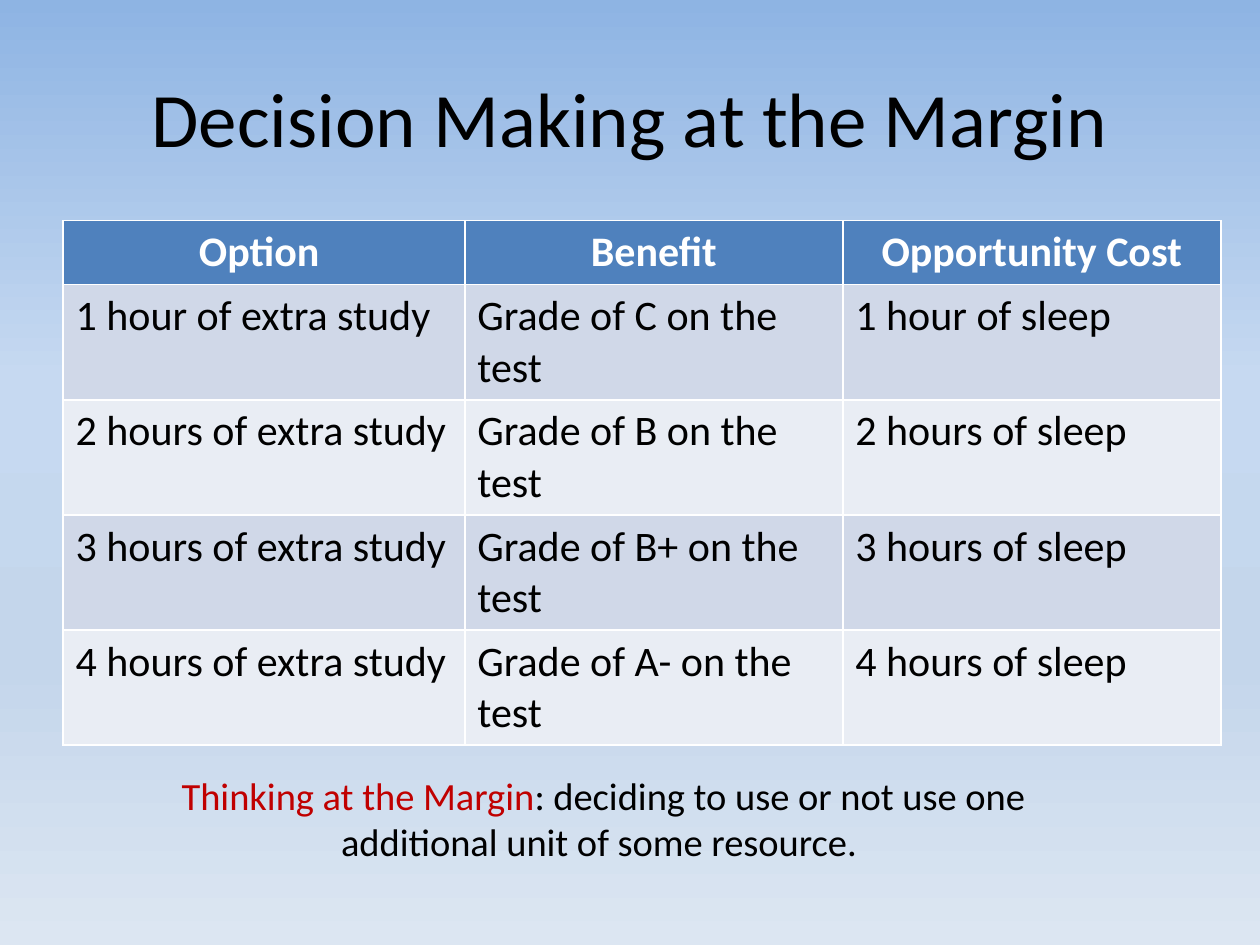
from dataclasses import dataclass

from lxml.etree import SubElement
from pptx import Presentation
from pptx.dml.color import RGBColor as Rgb
from pptx.enum.text import MSO_ANCHOR as Anchor
from pptx.enum.text import MSO_AUTO_SIZE as Fit
from pptx.enum.text import PP_ALIGN as Align
from pptx.oxml.ns import qn
from pptx.util import Cm, Pt

FONT = "Calibri"
HEX = {
    "black": "000000",
    "white": "FFFFFF",
    "red": "C00000",
    "head": "4F81BD",
    "odd": "D0D8E8",
    "even": "E9EDF4",
}
STOPS = {0: "8EB4E3", 40: "C6D9F1", 70: "C4D6EB", 100: "DCE6F2"}
HEADS = ("Option ", "Benefit", "Opportunity Cost")
GRADES = ("C", "B", "B+", "A-")
WIDTHS = (8.1, 7.62, 7.62)
ROW = 1.04


@dataclass
class Box:
    left: float
    top: float
    width: float
    height: float

    def lengths(self) -> tuple:
        return Cm(self.left), Cm(self.top), Cm(self.width), Cm(self.height)


@dataclass
class Band:
    texts: tuple
    fill: str
    ink: str = "black"
    align: Align = Align.LEFT
    bold: bool = False


def style(para, size: int, ink: str, align: Align, bold: bool = False) -> None:
    para.alignment = align
    font = para.font
    font.name, font.size, font.bold = FONT, Pt(size), bold
    font.color.rgb = Rgb.from_string(HEX[ink])


def paint_back(slide) -> None:
    fill = slide.background.fill
    fill.gradient()
    fill.gradient_angle = 270
    stops = slide.element.find(".//" + qn("a:gsLst"))
    for old in list(stops):
        stops.remove(old)
    for place, color in STOPS.items():
        stop = SubElement(stops, qn("a:gs"), pos=str(place * 1000))
        SubElement(stop, qn("a:srgbClr"), val=color)


def add_title(slide, box: Box) -> None:
    title = slide.shapes.title
    title.left, title.top, title.width, title.height = box.lengths()
    title.text_frame.text = "Decision Making at the Margin"
    title.text_frame.vertical_anchor = Anchor.MIDDLE
    style(title.text_frame.paragraphs[0], 44, "black", Align.CENTER)


def fill_row(row, band: Band) -> None:
    row.height = Cm(ROW)
    for cell, text in zip(row.cells, band.texts):
        cell.text = text
        cell.fill.solid()
        cell.fill.fore_color.rgb = Rgb.from_string(HEX[band.fill])
        style(cell.text_frame.paragraphs[0], 24, band.ink, band.align, band.bold)


def add_grid(slide, box: Box, bands: list[Band]) -> None:
    frame = slide.shapes.add_table(len(bands), len(WIDTHS), *box.lengths())
    for col, width in zip(frame.table.columns, WIDTHS):
        col.width = Cm(width)
    for row, band in zip(frame.table.rows, bands):
        fill_row(row, band)
    frame.height = Cm(box.height)


def add_note(slide, box: Box) -> None:
    frame = slide.shapes.add_textbox(*box.lengths()).text_frame
    frame.word_wrap = True
    frame.auto_size = Fit.SHAPE_TO_FIT_TEXT
    para = frame.paragraphs[0]
    style(para, 22, "black", Align.CENTER)
    term = para.add_run()
    term.text = "Thinking at the Margin"
    term.font.color.rgb = Rgb.from_string(HEX["red"])
    para.add_run().text = ": deciding to use or not use one additional unit of some resource. "


def list_bands() -> list[Band]:
    bands = [Band(HEADS, "head", "white", Align.CENTER, True)]
    for count, grade in enumerate(GRADES, 1):
        time = f"{count} hour" + ("s" if count > 1 else "")
        texts = (f"{time} of extra study", f"Grade of {grade} on the test", f"{time} of sleep")
        bands.append(Band(texts, "odd" if count % 2 else "even"))
    return bands


def main() -> None:
    deck = Presentation()
    deck.slide_width, deck.slide_height = Cm(25.4), Cm(19.05)
    slide = deck.slides.add_slide(deck.slide_layouts[5])
    paint_back(slide)
    add_title(slide, Box(1.27, 0.76, 22.86, 3.18))
    add_grid(slide, Box(1.27, 4.45, sum(WIDTHS), 10.41), list_bands())
    add_note(slide, Box(2.54, 15.44, 19.25, 2.13))
    deck.save("out.pptx")


if __name__ == "__main__":
    main()
